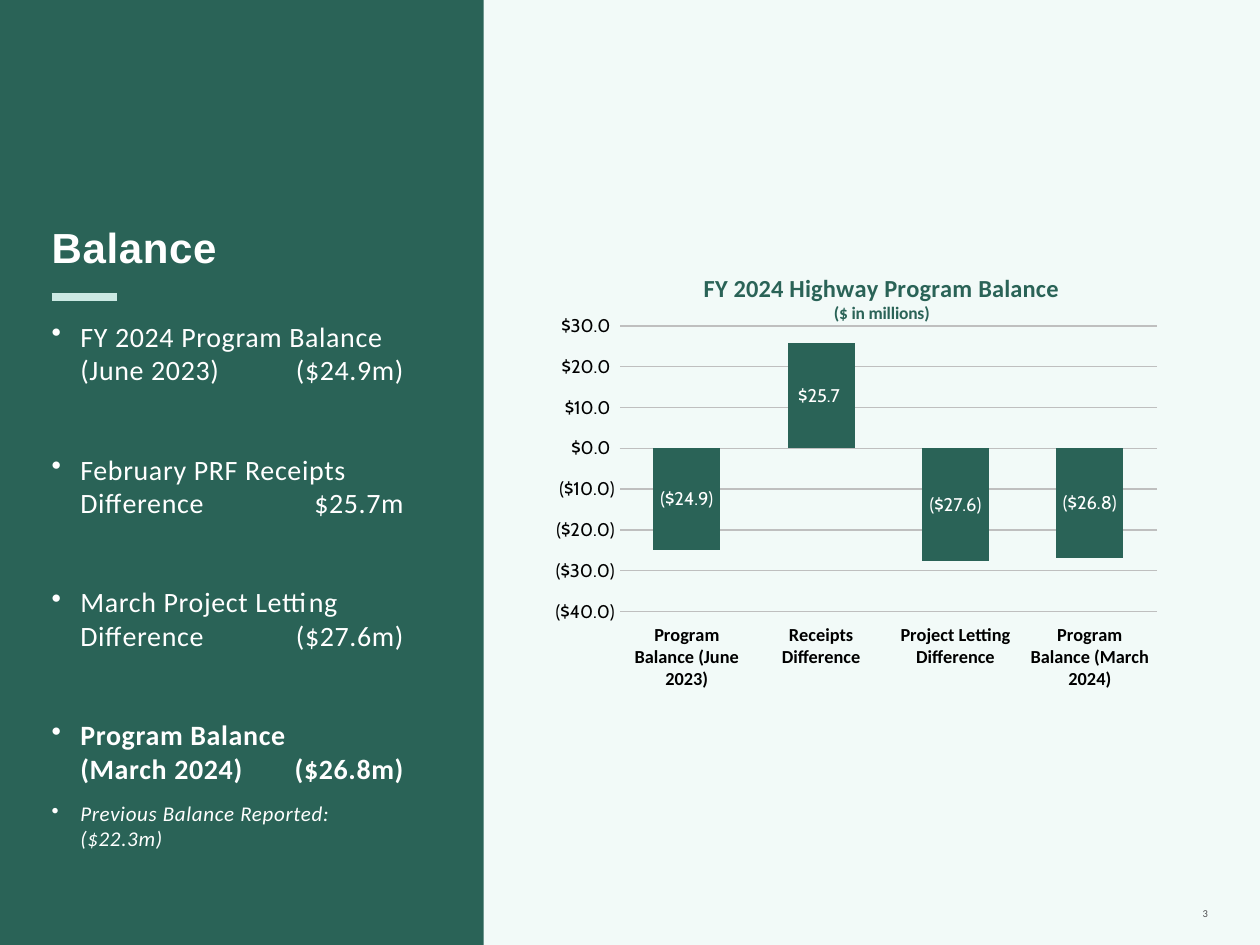
from dataclasses import dataclass

from lxml import etree
from pptx import Presentation
from pptx import util as u
from pptx.chart.data import CategoryChartData
from pptx.dml.color import RGBColor
from pptx.enum import chart as charts, shapes, text
from pptx.oxml import ns


@dataclass(frozen=True)
class Theme:
    """Colours, fonts and type sizes of the deck."""
    green: str = "2A6357"
    mint: str = "CBE9E3"
    pale: str = "F2FAF8"
    white: str = "FFFFFF"
    black: str = "000000"
    grey: str = "4D4D4F"
    rule: str = "BFBFBF"
    heading: str = "Arial"
    body: str = "Calibri"
    figures: str = "Cabin"
    heading_size: float = 24
    bullet_size: float = 16
    note_size: float = 12
    chart_title_size: float = 14
    chart_size: float = 10
    label_size: float = 10.5
    number_size: float = 6


THEME = Theme()
MONEY = '"$"#,##0.0_);\\("$"#,##0.0\\)'
BALANCES = {
    "Program Balance (June 2023)": -24.9,
    "Receipts Difference": 25.7,
    "Project Letting Difference": -27.6,
    "Program Balance (March 2024)": -26.8,
}
BULLETS = [
    (["FY 2024 Program Balance (June 2023)\t($24.9m)"], 9, {}),
    (["February PRF Receipts Difference\t$25.7m"], 37.5, {}),
    (["March Project Letting Difference\t($27.6m)"], 37.5, {}),
    (["Program Balance", "(March 2024)\t($26.8m)"], 37.5, {"bold": True}),
    (["Previous Balance Reported:", "($22.3m)"], 9,
     {"size": THEME.note_size, "italic": True}),
]


def colour(value):
    """Turn a hex string into a colour."""
    return RGBColor.from_string(value)


def style(font, name, size, hue, bold=False, italic=False):
    """Set face, size, colour and weight of a font."""
    font.name, font.size, font.bold, font.italic = name, u.Pt(size), bold, italic
    font.color.rgb = colour(hue)


def add_run(paragraph, words, name, size, hue, spacing=0, **weight):
    """Append one styled run with letter spacing in points."""
    run = paragraph.add_run()
    run.text = words
    style(run.font, name, size, hue, **weight)
    if spacing:
        run.font._element.set("spc", str(round(spacing * 100)))


def add_frame(slide, box, padding=0):
    """Add a wrapping text box and return its text frame."""
    frame = slide.shapes.add_textbox(*map(u.Cm, box)).text_frame
    frame.word_wrap = True
    frame.margin_left = frame.margin_right = 0
    frame.margin_top = frame.margin_bottom = u.Cm(padding)
    return frame


def make_bullet(paragraph, indent, tab):
    """Give a paragraph a hanging bullet and a right-aligned tab stop."""
    properties = paragraph._p.get_or_add_pPr()
    properties.set("marL", str(u.Cm(indent)))
    properties.set("indent", str(-u.Cm(indent)))
    etree.SubElement(properties, ns.qn("a:buChar")).set("char", "•")
    stops = etree.SubElement(properties, ns.qn("a:tabLst"))
    stop = etree.SubElement(stops, ns.qn("a:tab"))
    stop.set("pos", str(u.Cm(tab)))
    stop.set("algn", "r")


def add_summary(slide, box):
    """Draw the green panel with its heading, accent rule and bullets."""
    left, top, width, height = box
    panel = slide.shapes.add_shape(shapes.MSO_SHAPE.RECTANGLE, *map(u.Cm, box))
    panel.shadow.inherit = False
    panel.fill.solid()
    panel.fill.fore_color.rgb = colour(THEME.green)
    panel.line.fill.background()

    margin = left + 1.04
    frame = add_frame(slide, (margin, top + 4.47, 7.72, 12.78))
    frame.auto_size = text.MSO_AUTO_SIZE.SHAPE_TO_FIT_TEXT
    heading = frame.paragraphs[0]
    heading.space_after = u.Pt(18)
    add_run(heading, "Balance", THEME.heading, THEME.heading_size, THEME.white,
            spacing=0.4, bold=True)
    for lines, gap, look in BULLETS:
        paragraph = frame.add_paragraph()
        paragraph.space_before = u.Pt(gap)
        make_bullet(paragraph, 0.58, 7.1)
        settings = {"size": THEME.bullet_size, **look}
        for index, line in enumerate(lines):
            if index:
                paragraph.add_line_break()
            add_run(paragraph, line, THEME.body, hue=THEME.white, spacing=0.4, **settings)

    accent_y = u.Cm(top + 5.99)
    accent = slide.shapes.add_connector(
        shapes.MSO_CONNECTOR.STRAIGHT, u.Cm(margin), accent_y, u.Cm(margin + 1.32), accent_y)
    accent.line.color.rgb = colour(THEME.mint)
    accent.line.width = u.Pt(4.5)
    etree.SubElement(accent._element.spPr, ns.qn("a:effectLst"))


def manual_layout(**values):
    """Build a chart layout element from fractions of the chart area."""
    layout = etree.Element(ns.qn("c:layout"))
    manual = etree.SubElement(layout, ns.qn("c:manualLayout"))
    for tag, value in values.items():
        etree.SubElement(manual, ns.qn("c:" + tag)).set("val", str(value))
    return layout


def place(parent, layout, index):
    """Put a layout element in a chart part, replacing any present one."""
    for present in parent.findall(ns.qn("c:layout")):
        parent.remove(present)
    parent.insert(index, layout)


def add_chart_title(chart):
    """Write the two-line chart title."""
    title = chart.chart_title
    frame = title.text_frame
    add_run(frame.paragraphs[0], "FY 2024 Highway Program Balance", THEME.body,
            THEME.chart_title_size, THEME.green, bold=True)
    add_run(frame.add_paragraph(), "($ in millions)", THEME.body,
            THEME.chart_size, THEME.green, bold=True)
    place(title._element, manual_layout(xMode="edge", yMode="edge", x=0.23, y=0.02), 1)


def add_balance_chart(slide, box):
    """Draw the column chart of programme balances."""
    data = CategoryChartData()
    data.categories = list(BALANCES)
    data.add_series("Series 1", list(BALANCES.values()))
    chart = slide.shapes.add_chart(
        charts.XL_CHART_TYPE.COLUMN_CLUSTERED, *map(u.Cm, box), data).chart
    style(chart.font, THEME.figures, THEME.chart_size, THEME.black)
    chart.has_legend = False
    add_chart_title(chart)
    place(chart._chartSpace.chart.plotArea, manual_layout(
        layoutTarget="inner", xMode="edge", yMode="edge",
        x=0.1, y=0.153, w=0.87, h=0.648), 0)

    plot = chart.plots[0]
    plot.gap_width, plot.overlap, plot.vary_by_categories = 100, -24, False
    series = plot.series[0]
    series.invert_if_negative = False
    series.format.fill.solid()
    series.format.fill.fore_color.rgb = colour(THEME.green)
    plot.has_data_labels = True
    labels = plot.data_labels
    labels.show_value = True
    labels.position = charts.XL_LABEL_POSITION.CENTER
    labels.number_format, labels.number_format_is_linked = MONEY, False
    style(labels.font, THEME.figures, THEME.label_size, THEME.white)

    categories, values = chart.category_axis, chart.value_axis
    for axis, face in ((categories, THEME.body), (values, THEME.figures)):
        axis.major_tick_mark = axis.minor_tick_mark = charts.XL_TICK_MARK.NONE
        style(axis.tick_labels.font, face, THEME.label_size, THEME.black,
              bold=axis is categories)
    categories.tick_label_position = charts.XL_TICK_LABEL_POSITION.LOW
    values.minimum_scale, values.maximum_scale, values.major_unit = -40, 30, 10
    values.tick_labels.number_format = MONEY
    values.tick_labels.number_format_is_linked = False
    values.format.line.fill.background()
    for line in (categories.format.line, values.major_gridlines.format.line):
        line.color.rgb = colour(THEME.rule)
        line.width = u.Pt(0.75)


def add_page_number(slide, box):
    """Write the page number at the lower right."""
    frame = add_frame(slide, box, padding=0.13)
    frame.vertical_anchor = text.MSO_ANCHOR.BOTTOM
    paragraph = frame.paragraphs[0]
    paragraph.alignment = text.PP_ALIGN.RIGHT
    add_run(paragraph, "3", THEME.body, THEME.number_size, THEME.grey, spacing=1.1)


def main():
    """Build and save the slide."""
    presentation = Presentation()
    presentation.slide_width, presentation.slide_height = u.Cm(25.4), u.Cm(19.05)
    slide = presentation.slides.add_slide(presentation.slide_layouts[6])
    slide.background.fill.solid()
    slide.background.fill.fore_color.rgb = colour(THEME.pale)
    add_summary(slide, (0, 0, 9.75, 19.05))
    add_balance_chart(slide, (11.2, 5.21, 12.5, 8.89))
    add_page_number(slide, (21.89, 17.65, 2.46, 1.02))
    presentation.save("out.pptx")


if __name__ == "__main__":
    main()
